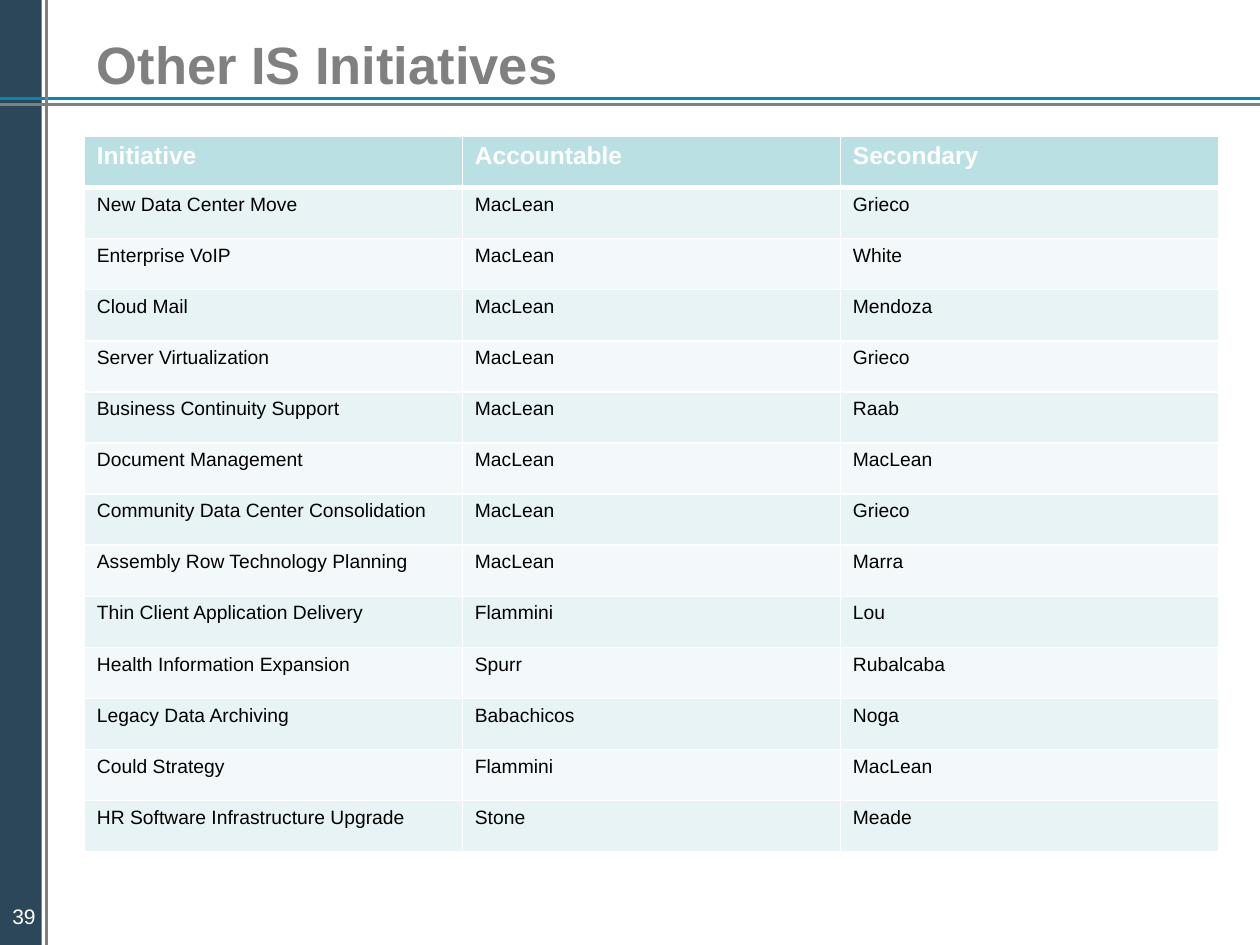
from lxml import etree
from pptx import Presentation
from pptx.dml.color import RGBColor
from pptx.enum.shapes import MSO_CONNECTOR, MSO_SHAPE
from pptx.enum.text import MSO_ANCHOR, PP_ALIGN
from pptx.oxml.ns import qn
from pptx.util import Cm, Pt

STRAIGHT = MSO_CONNECTOR.STRAIGHT
RECTANGLE = MSO_SHAPE.RECTANGLE
MIDDLE = MSO_ANCHOR.MIDDLE
LEFT = PP_ALIGN.LEFT

FONT = "Arial"
TITLE_ONLY = 5
WIDTH, HEIGHT = 25.4, 19.05
COLORS = {
    "navy": "2C465A",
    "gray": "808080",
    "blue": "008AB0",
    "header": "BBE0E3",
    "odd_row": "E7F3F4",
    "even_row": "F3F9FA",
    "white": "FFFFFF",
    "black": "000000",
}
ROWS = [
    ("Initiative", "Accountable", "Secondary"),
    ("New Data Center Move", "MacLean", "Grieco"),
    ("Enterprise VoIP", "MacLean", "White"),
    ("Cloud Mail", "MacLean", "Mendoza"),
    ("Server Virtualization", "MacLean", "Grieco"),
    ("Business Continuity Support", "MacLean", "Raab"),
    ("Document Management", "MacLean", "MacLean"),
    ("Community Data Center Consolidation", "MacLean", "Grieco"),
    ("Assembly Row Technology Planning", "MacLean", "Marra"),
    ("Thin Client Application Delivery", "Flammini", "Lou"),
    ("Health Information Expansion", "Spurr", "Rubalcaba"),
    ("Legacy Data Archiving", "Babachicos", "Noga"),
    ("Could Strategy", "Flammini", "MacLean"),
    ("HR Software Infrastructure Upgrade", "Stone", "Meade"),
]


def rgb(name):
    return RGBColor.from_string(COLORS[name])


def write(text_frame, text, size, color, bold=False):
    text_frame.text = text
    para = text_frame.paragraphs[0]
    para.alignment = LEFT
    font = para.runs[0].font
    font.name = FONT
    font.size = Pt(size)
    font.bold = bold
    font.color.rgb = rgb(color)


def add_sidebar(page):
    sidebar = page.shapes.add_shape(RECTANGLE, 0, 0, Cm(0.84), Cm(HEIGHT))
    sidebar.shadow.inherit = False
    sidebar.fill.solid()
    sidebar.fill.fore_color.rgb = rgb("navy")
    sidebar.line.fill.background()


def add_rule(page, x1, y1, x2, y2, color):
    rule = page.shapes.add_connector(STRAIGHT, Cm(x1), Cm(y1), Cm(x2), Cm(y2))
    rule.line.color.rgb = rgb(color)
    rule.line.width = Pt(1.5)
    etree.SubElement(rule._element.spPr, qn("a:effectLst"))


def set_title(page, text):
    title = page.shapes.title
    title.left, title.top = Cm(1.7), Cm(0.43)
    title.width, title.height = Cm(22.43), Cm(1.7)
    title.text_frame.vertical_anchor = MIDDLE
    write(title.text_frame, text, 30, "gray", bold=True)


def set_borders(cell, top, bottom):
    """Draw white borders; top and bottom widths are in points."""
    properties = cell._tc.get_or_add_tcPr()
    for side, width in (("L", 1), ("R", 1), ("T", top), ("B", bottom)):
        line = etree.SubElement(properties, qn(f"a:ln{side}"), w=str(Pt(width)))
        fill = etree.SubElement(line, qn("a:solidFill"))
        etree.SubElement(fill, qn("a:srgbClr"), val=COLORS["white"])


def add_initiatives(page):
    table = page.shapes.add_table(
        len(ROWS), len(ROWS[0]), Cm(1.7), Cm(2.75), Cm(22.86), Cm(14.42)
    ).table
    for row_index, texts in enumerate(ROWS):
        is_header = row_index == 0
        row_color = "header" if is_header else "odd_row" if row_index % 2 else "even_row"
        for column_index, text in enumerate(texts):
            cell = table.cell(row_index, column_index)
            set_borders(cell, top=3 if row_index == 1 else 1, bottom=3 if is_header else 1)
            cell.fill.solid()
            cell.fill.fore_color.rgb = rgb(row_color)
            if is_header:
                write(cell.text_frame, text, 14, "white", bold=True)
            else:
                write(cell.text_frame, text, 11, "black")


def add_page_number(page, number):
    box = page.shapes.add_textbox(0, Cm(18.08), Cm(1.27), Cm(1.02))
    box.text_frame.word_wrap = True
    write(box.text_frame, number, 12, "white")


def main():
    deck = Presentation()
    deck.slide_width, deck.slide_height = Cm(WIDTH), Cm(HEIGHT)
    page = deck.slides.add_slide(deck.slide_layouts[TITLE_ONLY])
    add_sidebar(page)
    add_rule(page, 0, 2.11, WIDTH, 2.11, "gray")
    add_rule(page, 0, 1.98, WIDTH, 1.98, "blue")
    add_rule(page, 0.94, 0, 0.94, HEIGHT, "gray")
    set_title(page, "Other IS Initiatives")
    add_initiatives(page)
    add_page_number(page, "39")
    deck.save("out.pptx")


if __name__ == "__main__":
    main()
